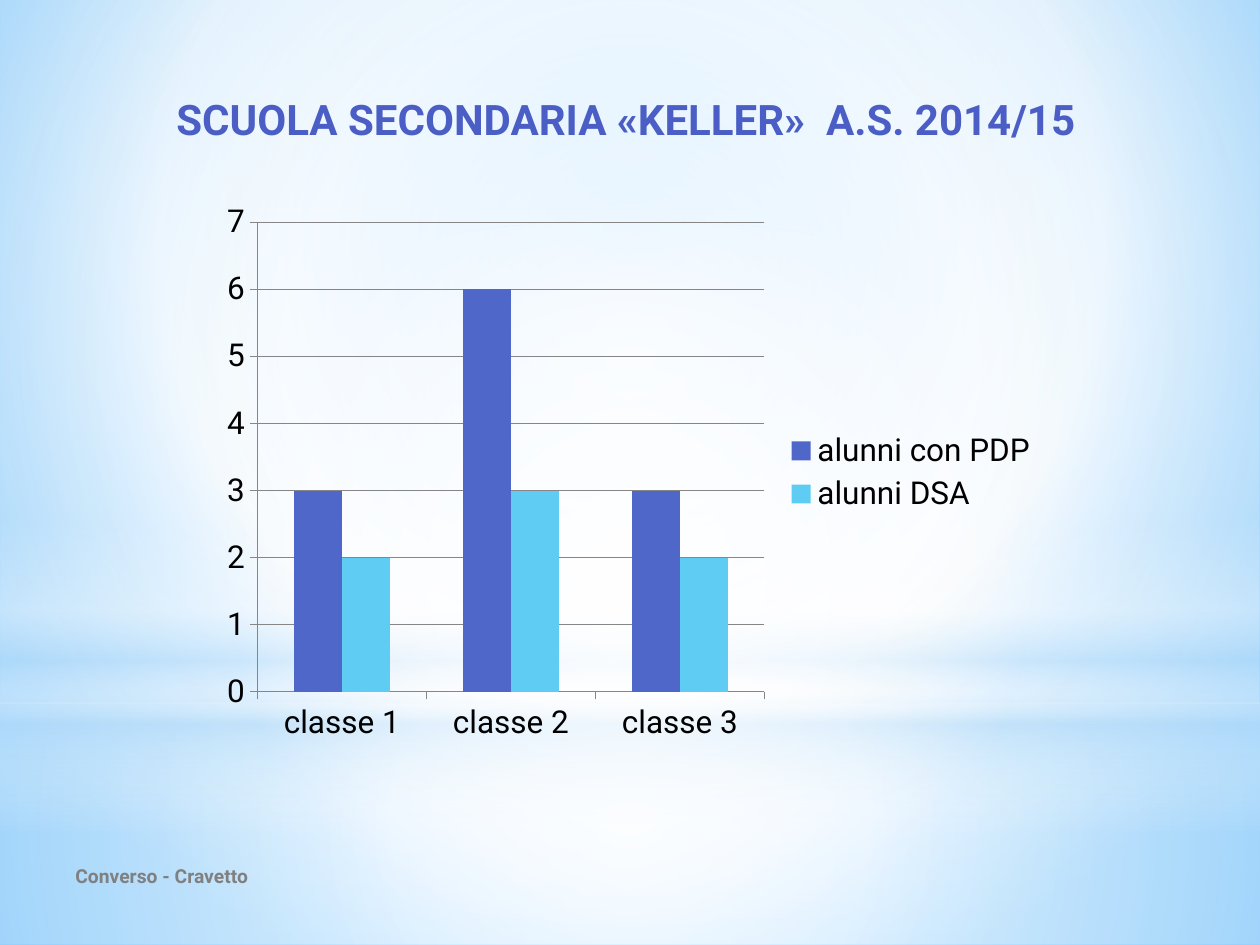
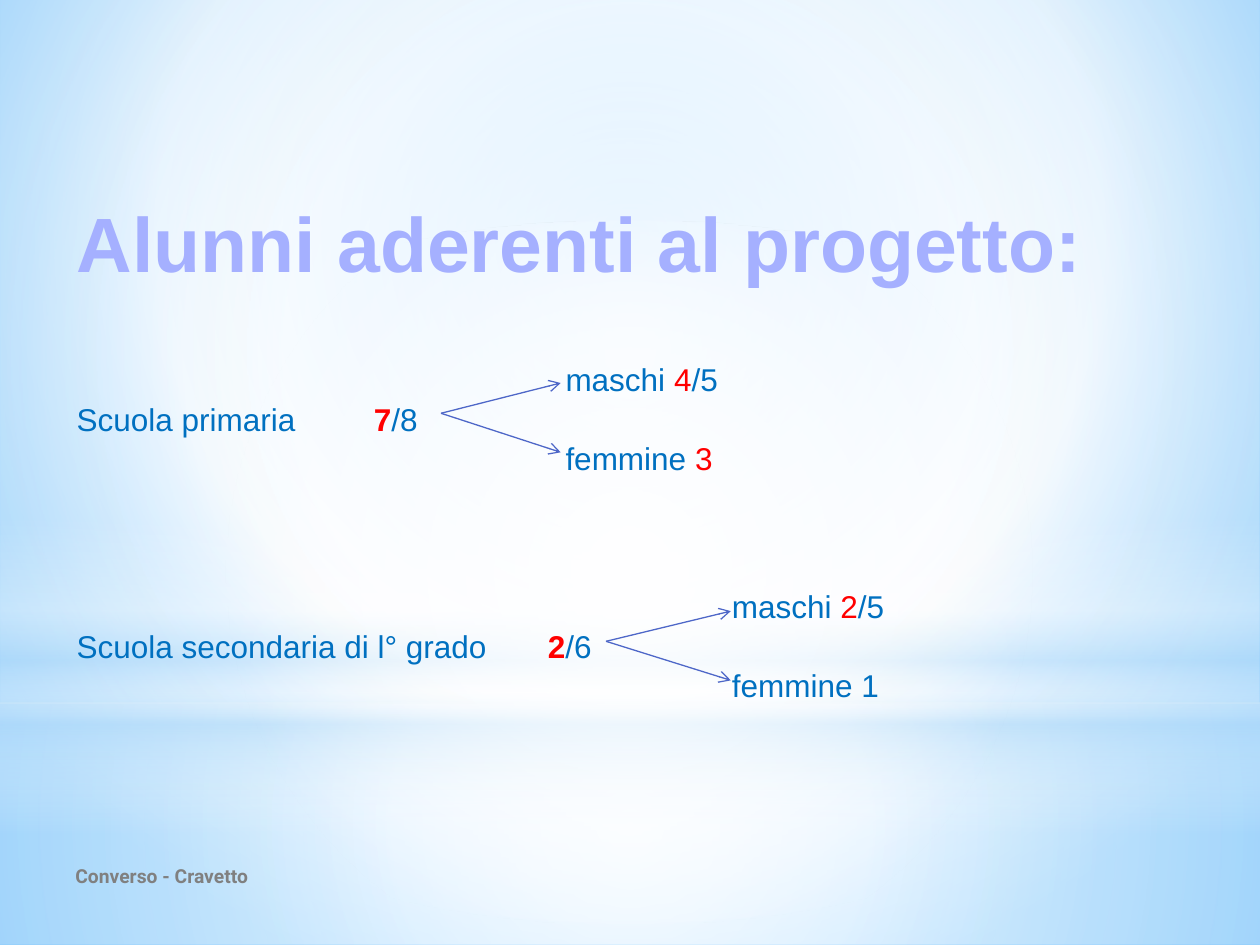
"""Build two slides on the pupils of a school project."""
from lxml.etree import SubElement
from pptx import Presentation
from pptx.chart.data import CategoryChartData
from pptx.dml.color import RGBColor
from pptx.enum.chart import XL_CHART_TYPE, XL_LEGEND_POSITION, XL_TICK_MARK
from pptx.enum.shapes import MSO_CONNECTOR, MSO_SHAPE
from pptx.enum.text import MSO_ANCHOR, MSO_AUTO_SIZE, PP_ALIGN
from pptx.oxml.ns import qn
from pptx.util import Inches, Pt

HEADING, BODY = "Roboto", "Arial"
INDIGO, CYAN, BLUE, RED, GREY, BLACK = "4E67C8", "5ECCF3", "0070C0", "FF0000", "808080", "000000"
AXIS_GREY, OUTLINE = "868686", "445EC3"
WHITE, SKY = "FFFFFF", "B4DCFA"
CENTRE = (50, 50, 50, 50)
LINE_SPACING = 1.04

BACKDROP = dict(stops=[(0, "9ED5FF"), (60, WHITE), (100, "5BB9FF")], focus=(20, 10, 20, 60))
GLOWS = [
    (MSO_SHAPE.RECTANGLE, (0, 5.58, 10, 1.92),
     dict(stops=[(0, WHITE, 91), (37, WHITE, 76), (100, SKY, 79)], focus=CENTRE)),
    (MSO_SHAPE.RECTANGLE, (0, 0, 10, 5.58),
     dict(stops=[(0, WHITE, 89), (48, WHITE, 62), (100, SKY, 79)], focus=CENTRE)),
    (MSO_SHAPE.RECTANGLE, (0, 4.12, 10, 2.5),
     dict(stops=[(0, WHITE, 0), (29, WHITE, 30), (45, SKY, 40), (55, WHITE, 26),
                 (65, SKY, 60), (100, WHITE, 0)])),
    (MSO_SHAPE.OVAL, (0, 1.75, 10, 5.58),
     dict(stops=[(0, WHITE), (56, WHITE, 0)], focus=CENTRE)),
]
SCHOOL_INK = [(0, "717FD2"), (49, "4A5EC6"), (50, "324CB5"), (92, "31479D"), (100, "30469A")]
PROJECT_INK = [(0, "BCC4FF"), (9, "A5B0FF"), (50, "001C8A"), (79, "A5B0FF"), (100, "BCC4FF")]


def rgb(value):
    """Turn a hex string into a colour."""
    return RGBColor.from_string(value)


def apply(target, **values):
    """Set each given attribute on the target."""
    for name, value in values.items():
        setattr(target, name, value)


def paint_gradient(owner, stops, focus=None):
    """Refill the owner's gradient, circular with a focus, else vertical."""
    gradient = next(owner.iter(qn("a:gradFill")))
    for part in list(gradient):
        gradient.remove(part)
    ramp = SubElement(gradient, qn("a:gsLst"))
    for position, colour, *opacity in stops:
        stop = SubElement(ramp, qn("a:gs"), pos=str(position * 1000))
        ink = SubElement(stop, qn("a:srgbClr"), val=colour)
        for percent in opacity:
            SubElement(ink, qn("a:alpha"), val=str(percent * 1000))
    if focus:
        circle = SubElement(gradient, qn("a:path"), {"path": "circle"})
        SubElement(circle, qn("a:fillToRect"),
                   {side: str(share * 1000) for side, share in zip("ltrb", focus)})
    else:
        SubElement(gradient, qn("a:lin"), ang="5400000", scaled="0")


class Deck:
    """Holds the shared style and the current slide."""

    def __init__(self):
        """Open a blank presentation."""
        self.show = Presentation()
        apply(self.show, slide_width=Inches(10), slide_height=Inches(7.5))
        self.slide = None

    def add_slide(self):
        """Start a title-only slide with its footer."""
        self.slide = self.show.slides.add_slide(self.show.slide_layouts[5])
        footer = self.text((0.5, 6.75, 3.67, 0.4))
        footer.vertical_anchor = MSO_ANCHOR.MIDDLE
        self.add_words(footer.paragraphs[0], "Converso - Cravetto",
                       name=HEADING, size=Pt(11), bold=True, colour=GREY)

    def backdrop(self):
        """Give the master its gradient and its layered glows."""
        master = self.show.slide_master
        master.background.fill.gradient()
        paint_gradient(master.element, **BACKDROP)
        for order, (outline, place, gradient) in enumerate(GLOWS):
            glow = self.slide.shapes.add_shape(outline, *map(Inches, place))
            glow.shadow.inherit = False
            glow.line.fill.background()
            glow.fill.gradient()
            paint_gradient(glow.element, **gradient)
            next(glow.element.iter(qn("p:cNvPr"))).set("id", str(20 + order))
            master.shapes.element.insert(2 + order, glow.element)

    def add_words(self, paragraph, words, colour=None, **font):
        """Add one formatted run."""
        run = paragraph.add_run()
        run.text = words
        apply(run.font, **font)
        if colour:
            run.font.color.rgb = rgb(colour)
        return run

    def text(self, place):
        """Add a wrapping text box and return its frame."""
        frame = self.slide.shapes.add_textbox(*map(Inches, place)).text_frame
        frame.word_wrap = True
        return frame

    def title(self, words, place, stops, outlined=False, **font):
        """Place the title and fill its letters with a gradient."""
        title = self.slide.shapes.title
        apply(title, **dict(zip(("left", "top", "width", "height"), map(Inches, place))))
        apply(title.text_frame, word_wrap=True, auto_size=MSO_AUTO_SIZE.NONE,
              vertical_anchor=MSO_ANCHOR.TOP)
        paragraph = title.text_frame.paragraphs[0]
        apply(paragraph, alignment=PP_ALIGN.LEFT, line_spacing=LINE_SPACING)
        run = self.add_words(paragraph, words, bold=True, **font)
        run.font.fill.gradient()
        paint_gradient(title.element, stops)
        if outlined:
            letters = next(title.element.iter(qn("a:rPr")))
            edge = SubElement(letters, qn("a:ln"), w=str(Pt(0.83)))
            SubElement(SubElement(edge, qn("a:solidFill")), qn("a:srgbClr"), val=OUTLINE)
            letters.insert(0, edge)

    def columns(self, place, classes, series):
        """Add the clustered column chart."""
        data = CategoryChartData(number_format="General")
        data.categories = classes
        for name, values, _ in series:
            data.add_series(name, values)
        chart = self.slide.shapes.add_chart(
            XL_CHART_TYPE.COLUMN_CLUSTERED, *map(Inches, place), data).chart
        apply(chart, has_title=False, has_legend=True)
        apply(chart.font, name=HEADING, size=Pt(18))
        chart.font.color.rgb = rgb(BLACK)
        apply(chart.legend, position=XL_LEGEND_POSITION.RIGHT, include_in_layout=False)
        apply(chart.plots[0], gap_width=150, overlap=0, vary_by_categories=False)
        for bars, (_, _, colour) in zip(chart.plots[0].series, series):
            bars.invert_if_negative = False
            bars.format.fill.solid()
            bars.format.fill.fore_color.rgb = rgb(colour)
        counts = chart.value_axis
        apply(counts, minimum_scale=0, maximum_scale=7, major_unit=1, has_major_gridlines=True)
        for axis in (counts, chart.category_axis):
            apply(axis, major_tick_mark=XL_TICK_MARK.OUTSIDE, minor_tick_mark=XL_TICK_MARK.NONE)
        for ruled in (counts, chart.category_axis, counts.major_gridlines):
            ruled.format.line.color.rgb = rgb(AXIS_GREY)
            ruled.format.line.width = Pt(0.75)

    def school(self, top, tab, indent, rows):
        """Set a school's total between its boys' and girls' counts."""
        frame = self.text((0.51, top, 8.58, 1))
        for number, row in enumerate(rows):
            paragraph = frame.add_paragraph() if number else frame.paragraphs[0]
            paragraph.line_spacing = LINE_SPACING
            is_total = number == 1
            for words, colour in row:
                self.add_words(paragraph, words, colour, name=BODY, size=Pt(18),
                               bold=is_total and colour == RED)
        for number, layout in enumerate(frame._txBody.iter(qn("a:pPr"))):
            if number == 1:
                tabs = SubElement(layout, qn("a:tabLst"))
                SubElement(tabs, qn("a:tab"), pos=str(Inches(tab)), algn="l")
            else:
                layout.set("marL", str(Inches(indent)))

    def arrow(self, start, end):
        """Draw a thin arrow from start to end."""
        arrow = self.slide.shapes.add_connector(
            MSO_CONNECTOR.STRAIGHT, *map(Inches, (*start, *end)))
        arrow.line.color.rgb = rgb(INDIGO)
        arrow.line.width = Pt(0.75)
        SubElement(next(arrow.element.iter(qn("a:ln"))), qn("a:tailEnd"), type="arrow")
        SubElement(next(arrow.element.iter(qn("p:spPr"))), qn("a:effectLst"))


def main():
    """Build and save the presentation."""
    deck = Deck()

    deck.add_slide()
    deck.backdrop()
    deck.columns((1.67, 1.53, 6.67, 4.44), ["classe 1", "classe 2", "classe 3"],
                 [("alunni con PDP", (3, 6, 3), INDIGO), ("alunni DSA", (2, 3, 2), CYAN)])
    deck.title("SCUOLA SECONDARIA «KELLER»  A.S. 2014/15", (1.3, 0.68, 7.48, 0.5),
               SCHOOL_INK, name=HEADING, size=Pt(24))

    deck.add_slide()
    deck.title("Alunni aderenti al progetto:", (0.51, 1.47, 8.58, 0.83),
               PROJECT_INK, outlined=True, name=BODY, size=Pt(44))
    deck.school(2.8, 2.36, 3.88, [
        [("maschi ", BLUE), ("4", RED), ("/5", BLUE)],
        [("Scuola primaria\t", BLUE), ("7", RED), ("/8", BLUE)],
        [("femmine ", BLUE), ("3", RED)]])
    deck.school(4.6, 3.74, 5.2, [
        [("maschi ", BLUE), ("2", RED), ("/5", BLUE)],
        [("Scuola secondaria di l° grado\t", BLUE), ("2", RED), ("/6", BLUE)],
        [("femmine 1", BLUE)]])
    for x, y, reach in ((3.5, 3.28, 0.95), (4.81, 5.09, 0.99)):
        for rise in (-0.24, 0.31):
            deck.arrow((x, y), (x + reach, y + rise))

    deck.show.save("out.pptx")


if __name__ == "__main__":
    main()
